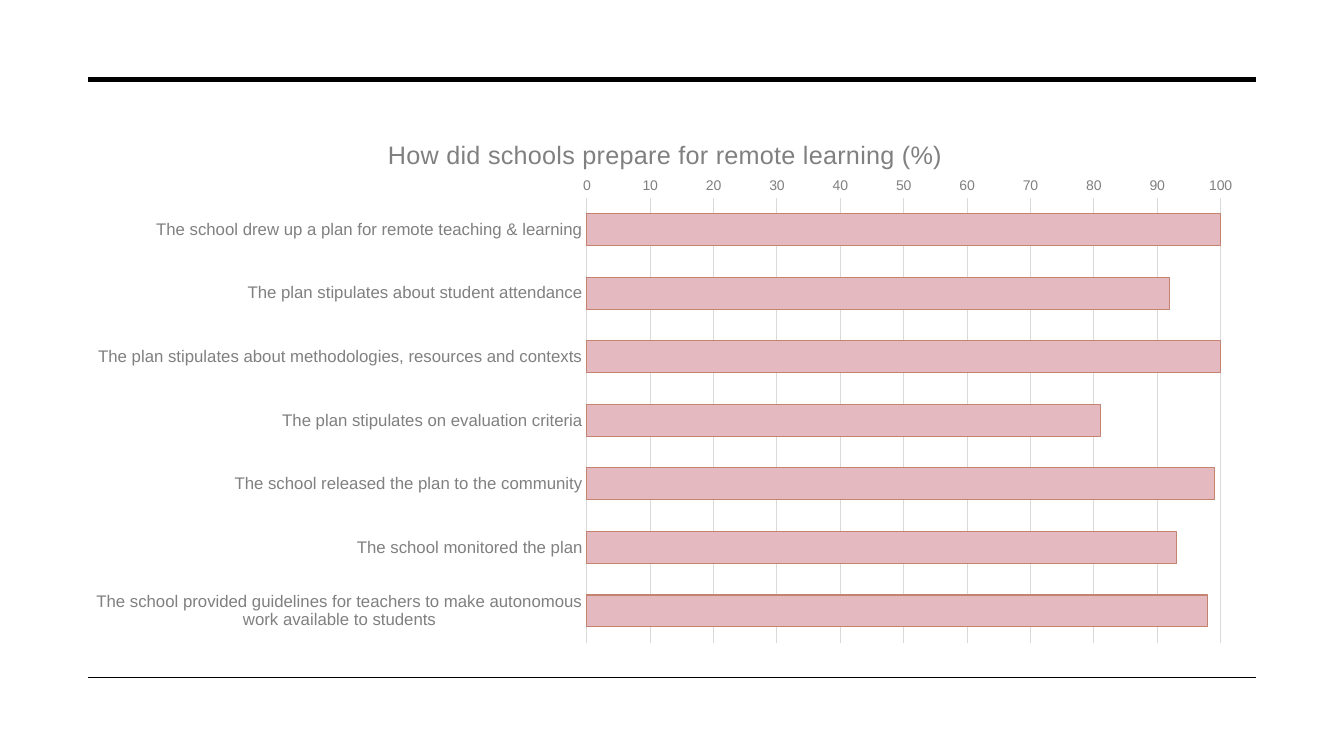
from lxml import etree
from pptx import Presentation
from pptx.chart.data import CategoryChartData
from pptx.dml.color import RGBColor
from pptx.enum import chart as ch, shapes
from pptx.oxml import parse_xml
from pptx.oxml.ns import nsdecls, qn
from pptx.util import Pt

COLORS = {"rule": "000000", "text": "808080", "grid": "D9D9D9",
          "bar": "E4B9C0", "edge": "C4836E"}
ANSWERS = [
    ("The school drew up a plan for remote teaching & learning", 100),
    ("The plan stipulates about student attendance", 92),
    ("The plan stipulates about methodologies, resources and contexts", 100),
    ("The plan stipulates on evaluation criteria", 81),
    ("The school released the plan to the community", 99),
    ("The school monitored the plan", 93),
    ("The school provided guidelines for teachers to make autonomous "
     "work available to students", 98),
]


def set_line(line, color, width):
    line.color.rgb = RGBColor.from_string(COLORS[color])
    line.width = Pt(width)


def set_font(font, size):
    font.name = "Arial"
    font.size = Pt(size)
    font.bold = False
    font.color.rgb = RGBColor.from_string(COLORS["text"])


prs = Presentation()
prs.slide_width, prs.slide_height = Pt(960), Pt(540)
s = prs.slides.add_slide(prs.slide_layouts[6])

# Rules above and below the chart
for y, width in ((56.9, 3.5), (483.8, 1)):
    rule = s.shapes.add_connector(shapes.MSO_CONNECTOR.STRAIGHT,
                                  Pt(63.2), Pt(y), Pt(897), Pt(y))
    set_line(rule.line, "rule", width)
    etree.SubElement(rule._element.spPr, qn("a:effectLst"))

# Bar chart
data = CategoryChartData()
data.categories = [label for label, _ in ANSWERS]
data.add_series("Series 1", [value for _, value in ANSWERS])
chart = s.shapes.add_chart(ch.XL_CHART_TYPE.BAR_CLUSTERED, Pt(51.8), Pt(79.9),
                           Pt(844.6), Pt(386.6), data).chart
chart.has_legend = False
set_font(chart.font, 10)

tf = chart.chart_title.text_frame
tf.text = "How did schools prepare for remote learning (%)"
r = tf.paragraphs[0].runs[0]
set_font(r.font, 18)
r.font._element.set("spc", "20")
chart.chart_title.include_in_layout = False

plot = chart.plots[0]
plot.gap_width = 100
plot.vary_by_categories = False
bars = plot.series[0]
bars.format.fill.solid()
bars.format.fill.fore_color.rgb = RGBColor.from_string(COLORS["bar"])
set_line(bars.format.line, "edge", 0.75)

questions, percent = chart.category_axis, chart.value_axis
for axis, size in ((questions, 12), (percent, 10)):
    axis.major_tick_mark = axis.minor_tick_mark = ch.XL_TICK_MARK.NONE
    set_font(axis.tick_labels.font, size)
questions.reverse_order = True
set_line(questions.format.line, "grid", 0.75)
percent.minimum_scale, percent.maximum_scale, percent.major_unit = 0, 100, 10
percent.format.line.fill.background()
set_line(percent.major_gridlines.format.line, "grid", 0.75)

# Fixed places for the title and the plot, as fractions of the chart
plot_area = chart._chartSpace.chart.plotArea
title = chart.chart_title._element
for parent, target, places in (
        (plot_area, '<c:layoutTarget val="inner"/>',
         {"x": 0.435, "y": 0.159, "w": 0.536, "h": 0.822}),
        (title, "", {"x": 0.263, "y": 0.04})):
    for old in parent.findall(qn("c:layout")):
        parent.remove(old)
    modes = "".join(f'<c:{k}Mode val="edge"/>' for k in "xy")
    sizes = "".join(f'<c:{k} val="{v}"/>' for k, v in places.items())
    layout = parse_xml(f'<c:layout {nsdecls("c")}><c:manualLayout>{target}{modes}'
                       f'{sizes}</c:manualLayout></c:layout>')
    parent.insert(1 if parent is title else 0, layout)

prs.save("out.pptx")
